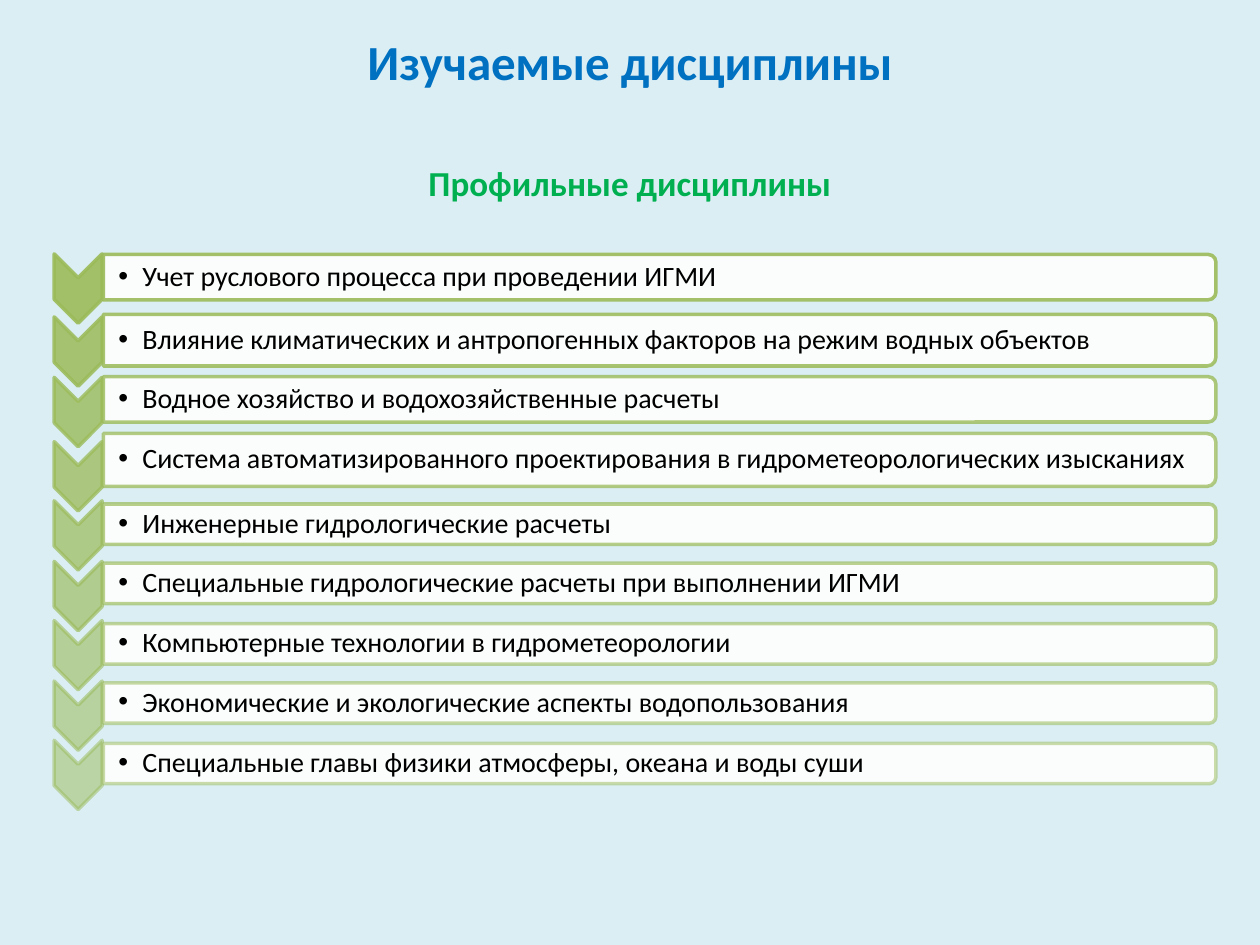
from dataclasses import dataclass

from lxml.etree import SubElement
from pptx import Presentation
from pptx.dml.color import RGBColor
from pptx.enum.shapes import MSO_SHAPE as Preset
from pptx.enum.text import MSO_ANCHOR as Anchor, PP_ALIGN as Align
from pptx.oxml.ns import qn
from pptx.util import Inches, Pt


@dataclass(frozen=True)
class Theme:
    font: str = "Calibri"
    background: str = "DBEEF4"
    title: str = "0070C0"
    subtitle: str = "00B050"
    accent: str = "9BBB59"
    bar: str = "FFFFFF"
    text: str = "000000"
    title_size: int = 28
    subtitle_size: int = 20
    item_size: int = 16
    line_width: int = 2


BAR_LEFT, BAR_WIDTH = 0.82, 8.83
CHEVRON_CENTER, CHEVRON_LENGTH, CHEVRON_WIDTH = 0.62, 0.55, 0.38
BAR_OPACITY = 90

# discipline, bar centre, bar height, chevron centre
DISCIPLINES = [
    ("Учет руслового процесса при проведении ИГМИ", 2.2, 0.36, 2.29),
    ("Влияние климатических и антропогенных факторов на режим водных объектов",
     2.7, 0.41, 2.79),
    ("Водное хозяйство и водохозяйственные расчеты", 3.17, 0.36, 3.27),
    ("Система автоматизированного проектирования в гидрометеорологических изысканиях",
     3.65, 0.42, 3.78),
    ("Инженерные гидрологические расчеты", 4.16, 0.32, 4.25),
    ("Специальные гидрологические расчеты при выполнении ИГМИ", 4.63, 0.32, 4.73),
    ("Компьютерные технологии в гидрометеорологии", 5.11, 0.32, 5.2),
    ("Экономические и экологические аспекты водопользования", 5.58, 0.32, 5.68),
    ("Специальные главы физики атмосферы, океана и воды суши", 6.06, 0.32, 6.15),
]


class SlideBuilder:
    def __init__(self, slide, theme):
        self.slide = slide
        self.theme = theme
        fill = slide.background.fill
        fill.solid()
        fill.fore_color.rgb = RGBColor.from_string(theme.background)
        self.list_shapes = slide.shapes.add_group_shape().shapes

    def paint(self, color_format, color, opacity):
        """Set a colour with an opacity in percent."""
        color_format.solid()
        color_format.fore_color.rgb = RGBColor.from_string(color)

    def set_opacity(self, shape, part, opacity):
        """Make the fill or line of a shape partly transparent."""
        color = shape.element.spPr.find(part + "/" + qn("a:srgbClr"))
        SubElement(color, qn("a:alpha")).set("val", str(opacity * 1000))

    def add_turned_shape(self, preset, center, size, fill, fill_opacity, line_opacity):
        """Add a shape turned by 90 degrees about its centre; size is before the turn."""
        (x, y), (width, height) = center, size
        shape = self.list_shapes.add_shape(
            preset, Inches(x - width / 2), Inches(y - height / 2),
            Inches(width), Inches(height))
        shape.rotation = 90
        shape.shadow.inherit = False
        shape.line.width = Pt(self.theme.line_width)
        self.paint(shape.fill, fill, fill_opacity)
        self.paint(shape.line.fill, self.theme.accent, line_opacity)
        self.set_opacity(shape, qn("a:solidFill"), fill_opacity)
        self.set_opacity(shape, qn("a:ln") + "/" + qn("a:solidFill"), line_opacity)

    def add_text(self, shapes, text, box, size, color, bold=False):
        """Add a one-paragraph text box; return its frame and paragraph."""
        frame = shapes.add_textbox(*map(Inches, box)).text_frame
        frame.word_wrap = True
        paragraph = frame.paragraphs[0]
        run = paragraph.add_run()
        run.text = text
        run.font.name = self.theme.font
        run.font.size = Pt(size)
        run.font.bold = bold
        run.font.color.rgb = RGBColor.from_string(color)
        return frame, paragraph

    def add_heading(self, text, top, height, size, color):
        frame, paragraph = self.add_text(
            self.slide.shapes, text, (0, top, 10, height), size, color, bold=True)
        frame.vertical_anchor = Anchor.MIDDLE
        paragraph.alignment = Align.CENTER

    def add_bullet(self, text, center, height):
        box = (BAR_LEFT, center - height / 2, BAR_WIDTH - 0.02, height)
        frame, paragraph = self.add_text(
            self.list_shapes, text, box, self.theme.item_size, self.theme.text)
        frame.vertical_anchor = Anchor.MIDDLE
        frame.margin_left = Inches(0.12)
        frame.margin_top = frame.margin_right = frame.margin_bottom = Inches(0.01)
        paragraph.line_spacing = 0.9
        properties = paragraph._p.get_or_add_pPr()
        properties.set("marL", str(Inches(0.19)))
        properties.set("indent", str(Inches(-0.19)))
        SubElement(properties, qn("a:buFont")).set("typeface", "Arial")
        SubElement(properties, qn("a:buChar")).set("char", "•")

    def add_discipline(self, text, bar_center, bar_height, chevron_center, opacity):
        self.add_turned_shape(
            Preset.CHEVRON, (CHEVRON_CENTER, chevron_center),
            (CHEVRON_LENGTH, CHEVRON_WIDTH), self.theme.accent, opacity, opacity)
        self.add_turned_shape(
            Preset.ROUND_2_SAME_RECTANGLE, (BAR_LEFT + BAR_WIDTH / 2, bar_center),
            (bar_height, BAR_WIDTH), self.theme.bar, BAR_OPACITY, opacity)
        self.add_bullet(text, bar_center, bar_height - 0.04)


def main():
    presentation = Presentation()
    presentation.slide_width, presentation.slide_height = Inches(10), Inches(7.5)
    theme = Theme()
    slide = presentation.slides.add_slide(presentation.slide_layouts[6])
    builder = SlideBuilder(slide, theme)

    builder.add_heading("Изучаемые дисциплины", 0.21, 0.55, theme.title_size, theme.title)
    builder.add_heading("Профильные дисциплины", 1.23, 0.44,
                        theme.subtitle_size, theme.subtitle)
    for index, discipline in enumerate(DISCIPLINES):
        builder.add_discipline(*discipline, opacity=90 - 5 * index)

    presentation.save("out.pptx")


if __name__ == "__main__":
    main()
